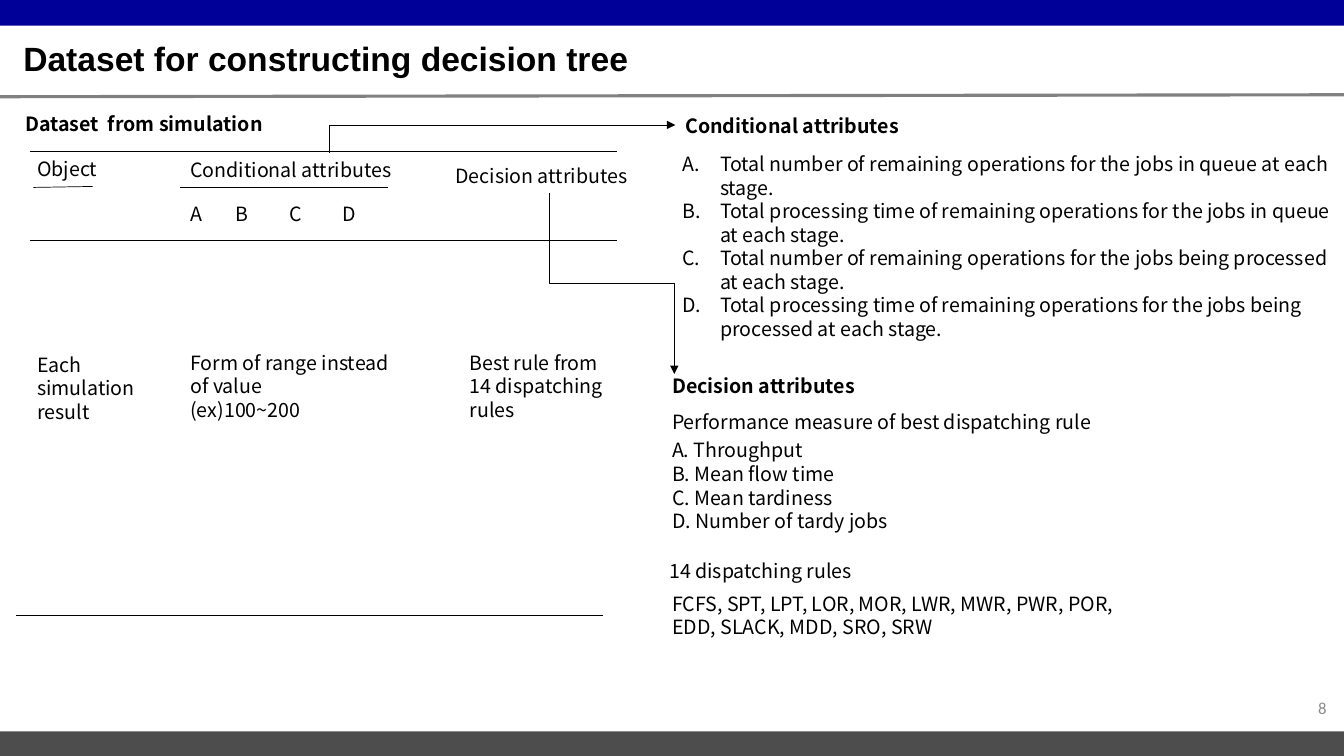
from dataclasses import dataclass

import lxml.etree
import pptx
import pptx.dml.color
import pptx.enum.shapes
import pptx.enum.text
import pptx.oxml
import pptx.oxml.ns
import pptx.util

Pt = pptx.util.Pt
COLORS = {"band": "000099", "footer": "4D4D4D", "rule": "808080", "ink": "000000", "number": "8C8C8C"}
BODY_FONT = "Noto Sans CJK KR"
SLIDE_WIDTH, SLIDE_HEIGHT = 960, 540


@dataclass
class Label:
    left: float
    top: float
    width: float
    height: float
    lines: list[str]
    bold: bool = False


@dataclass
class Line:
    start: tuple[float, float]
    end: tuple[float, float]
    color: str = "ink"
    weight: float = 0.5


@dataclass
class Arrow:
    start: tuple[float, float]
    end: tuple[float, float]
    preset: str
    rotation: int  # 90 or 270 degrees


LABELS = [
    # Table of the simulation dataset
    Label(10.8, 76.3, 366.5, 24.5, ["Dataset  from simulation"], True),
    Label(19.4, 108.7, 94.3, 24.5, ["Object"]),
    Label(128.9, 109.4, 213.8, 24.5, ["Conditional attributes"]),
    Label(318.2, 113.8, 148.3, 24.5, ["Decision attributes"]),
    Label(328.3, 247, 112.3, 58.3, ["Best rule from 14 dispatching rules"]),
    Label(128.9, 247, 162, 58.3, ["Form of range instead of value", "(ex)100~200"]),
    Label(19.4, 248.4, 102.2, 58.3, ["Each simulation result"]),
    # Explanations on the right
    Label(482.4, 77.8, 213.8, 24.5, ["Conditional attributes"], True),
    Label(473, 263.5, 148.3, 24.5, ["Decision attributes"], True),
    Label(473, 289.4, 351.4, 24.5, ["Performance measure of best dispatching rule"]),
    Label(473, 309.6, 393.8, 74.9,
          ["A. Throughput", "B. Mean flow time", "C. Mean tardiness", "D. Number of tardy jobs"]),
    Label(470.9, 396, 351.4, 24.5, ["14 dispatching rules"]),
    Label(473, 419, 351.4, 41,
          ["FCFS, SPT, LPT, LOR, MOR, LWR, MWR, PWR, POR, EDD, SLACK, MDD, SRO, SRW"]),
]
COLUMN_LETTERS = {"A": 128.9, "B": 161.3, "C": 199.4, "D": 237.6}
LABELS += [Label(left, 140.8, 59.8, 24.5, [letter]) for letter, left in COLUMN_LETTERS.items()]

LINES = [
    Line((0, 69.1), (SLIDE_WIDTH, 67.7), "rule", 2.25),
    Line((21.6, 108), (440.6, 108)),
    Line((21.6, 172), (440.6, 172)),
    Line((11.5, 439.9), (430.6, 439.9)),
    Line((128.9, 133.9), (277.2, 133.9)),
    Line((23.8, 133.9), (66.2, 133.2)),
]
ARROWS = [
    Arrow((235.4, 109.4), (482.4, 89.3), "bentConnector2", 90),
    Arrow((392.4, 138.2), (481.7, 267.1), "bentConnector3", 270),
]
CONDITIONS = [
    "Total number of remaining operations for the jobs in queue at each stage.",
    "Total processing time of remaining operations for the jobs in queue at each stage.",
    "Total number of remaining operations for the jobs being processed at each stage.",
    "Total processing time of remaining operations for the jobs being processed at each stage.",
]


def rgb(name: str) -> pptx.dml.color.RGBColor:
    return pptx.dml.color.RGBColor.from_string(COLORS[name])


def place(shape, left: float, top: float, width: float, height: float) -> None:
    shape.left, shape.top, shape.width, shape.height = Pt(left), Pt(top), Pt(width), Pt(height)


def style_font(paragraph, size: float = 14, name: str = BODY_FONT, color: str = "ink",
               bold: bool = False) -> None:
    font = paragraph.font
    font.size, font.name, font.bold = Pt(size), name, bold
    font.color.rgb = rgb(color)


def add_band(slide, top: float, height: float, color: str) -> None:
    band = slide.shapes.add_shape(pptx.enum.shapes.MSO_SHAPE.RECTANGLE,
                                  0, Pt(top), Pt(SLIDE_WIDTH), Pt(height))
    band.shadow.inherit = False
    band.fill.solid()
    band.fill.fore_color.rgb = rgb(color)
    band.line.fill.background()


def add_label(slide, label: Label) -> None:
    box = slide.shapes.add_textbox(Pt(label.left), Pt(label.top), Pt(label.width), Pt(label.height))
    frame = box.text_frame
    frame.word_wrap = True
    frame.auto_size = pptx.enum.text.MSO_AUTO_SIZE.SHAPE_TO_FIT_TEXT
    frame.text = "\n".join(label.lines)
    for paragraph in frame.paragraphs:
        style_font(paragraph, bold=label.bold)


def add_line(slide, line: Line, kind=pptx.enum.shapes.MSO_CONNECTOR.STRAIGHT):
    connector = slide.shapes.add_connector(kind, *(Pt(value) for value in line.start + line.end))
    connector.line.color.rgb = rgb(line.color)
    connector.line.width = Pt(line.weight)
    lxml.etree.SubElement(connector._element.spPr, pptx.oxml.ns.qn("a:effectLst"))
    return connector


def add_arrow(slide, arrow: Arrow) -> None:
    # The frame is laid out before its quarter turn about the centre
    center_x = (arrow.start[0] + arrow.end[0]) / 2
    center_y = (arrow.start[1] + arrow.end[1]) / 2
    sign = 1 if arrow.rotation == 90 else -1
    offset_x = sign * (arrow.start[1] - center_y)
    offset_y = sign * (center_x - arrow.start[0])
    frame = Line((center_x + offset_x, center_y + offset_y), (center_x - offset_x, center_y - offset_y))
    connector = add_line(slide, frame, pptx.enum.shapes.MSO_CONNECTOR.ELBOW)
    properties = connector._element.spPr
    properties.find(pptx.oxml.ns.qn("a:xfrm")).set("rot", str(arrow.rotation * 60000))
    properties.find(pptx.oxml.ns.qn("a:prstGeom")).set("prst", arrow.preset)
    outline = properties.find(pptx.oxml.ns.qn("a:ln"))
    lxml.etree.SubElement(outline, pptx.oxml.ns.qn("a:tailEnd"), type="triangle")


def fill_title(slide) -> None:
    title = slide.shapes.title
    place(title, 9.4, 28.1, 897.8, 31)
    title.text_frame.text = "Dataset for constructing decision tree"
    title.text_frame.vertical_anchor = pptx.enum.text.MSO_ANCHOR.MIDDLE
    title.text_frame.auto_size = pptx.enum.text.MSO_AUTO_SIZE.NONE
    paragraph = title.text_frame.paragraphs[0]
    paragraph.alignment = pptx.enum.text.PP_ALIGN.LEFT
    paragraph.line_spacing = 0.9
    style_font(paragraph, 24, "Arial", bold=True)


def fill_conditions(slide) -> None:
    body = slide.placeholders[1]
    place(body, 480.2, 105.1, 481, 143.3)
    frame = body.text_frame
    frame.auto_size = pptx.enum.text.MSO_AUTO_SIZE.SHAPE_TO_FIT_TEXT
    frame.text = "\n".join(CONDITIONS)
    for paragraph in frame.paragraphs:
        style_font(paragraph)
        paragraph.space_before = Pt(0)
        properties = paragraph._p.get_or_add_pPr()
        properties.set("marL", str(Pt(27)))
        properties.set("indent", str(Pt(-27)))
        lxml.etree.SubElement(properties, pptx.oxml.ns.qn("a:buFont"), typeface="+mj-lt")
        lxml.etree.SubElement(properties, pptx.oxml.ns.qn("a:buAutoNum"), type="alphaUcPeriod")
        # Bullet elements come before the default run properties
        properties.append(properties.find(pptx.oxml.ns.qn("a:defRPr")))


def add_slide_number(slide) -> None:
    box = slide.shapes.add_textbox(Pt(738.7), Pt(491), Pt(216), Pt(28.8))
    box.text_frame.word_wrap = True
    box.text_frame.vertical_anchor = pptx.enum.text.MSO_ANCHOR.MIDDLE
    paragraph = box.text_frame.paragraphs[0]
    paragraph.text = "8"
    paragraph.alignment = pptx.enum.text.PP_ALIGN.RIGHT
    style_font(paragraph, 12, "Calibri", "number")


def main() -> None:
    presentation = pptx.Presentation()
    presentation.slide_width, presentation.slide_height = Pt(SLIDE_WIDTH), Pt(SLIDE_HEIGHT)
    slide = presentation.slides.add_slide(presentation.slide_layouts[1])
    add_band(slide, 0, 18.4, "band")
    add_band(slide, 522.4, 17.6, "footer")
    fill_title(slide)
    fill_conditions(slide)
    add_slide_number(slide)
    for label in LABELS:
        add_label(slide, label)
    for line in LINES:
        add_line(slide, line)
    for arrow in ARROWS:
        add_arrow(slide, arrow)
    presentation.save("out.pptx")


if __name__ == "__main__":
    main()
